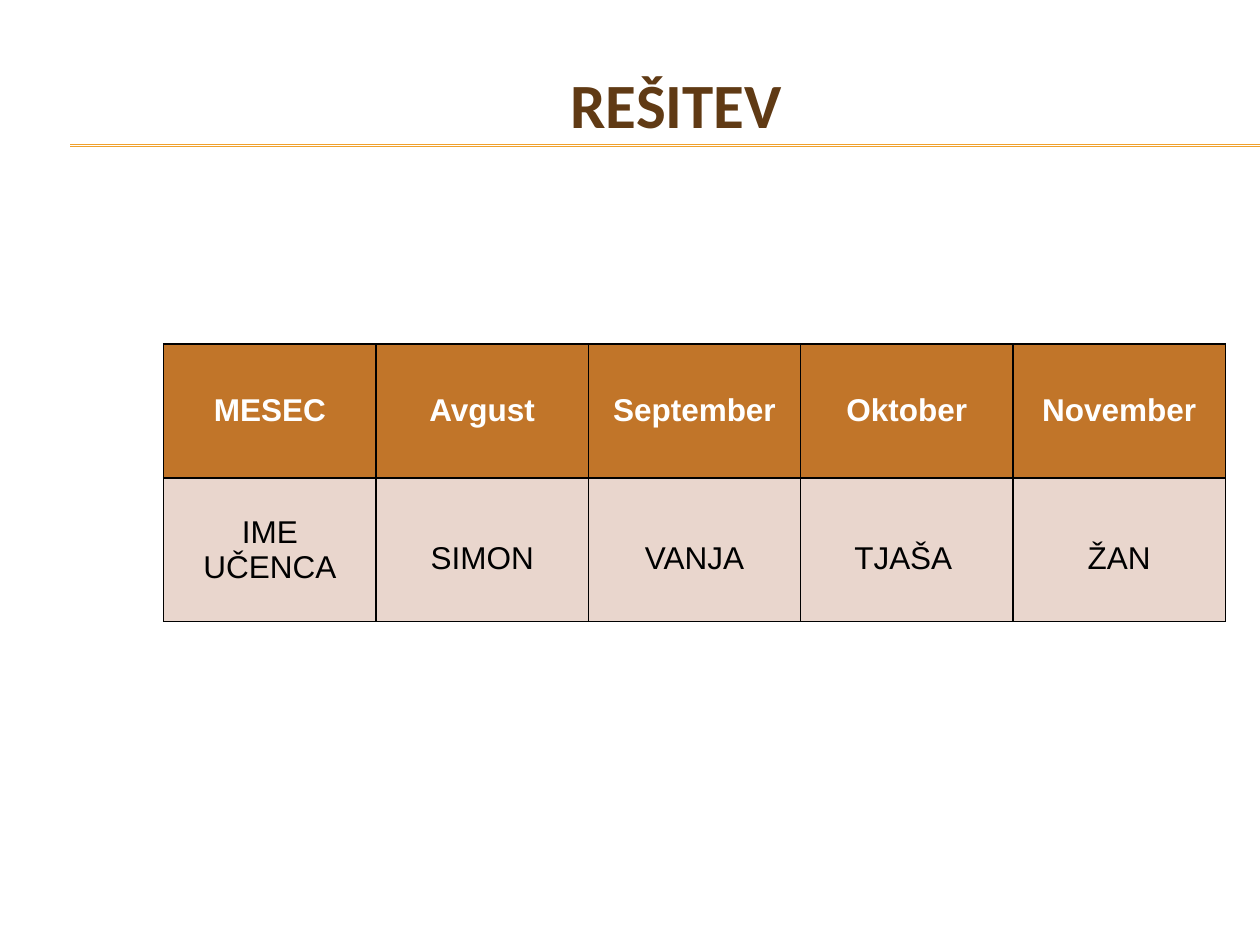
from dataclasses import dataclass

import pptx
import pptx.dml.color
import pptx.enum.shapes
import pptx.enum.text
import pptx.oxml
import pptx.oxml.ns
import pptx.util

Cm = pptx.util.Cm
Pt = pptx.util.Pt
RGBColor = pptx.dml.color.RGBColor
MIDDLE = pptx.enum.text.MSO_ANCHOR.MIDDLE
CENTER = pptx.enum.text.PP_ALIGN.CENTER

BROWN = RGBColor(0x60, 0x3A, 0x14)
GOLD = RGBColor(0xF0, 0xA2, 0x2E)
ORANGE = RGBColor(0xC1, 0x75, 0x29)
BLUSH = RGBColor(0xE9, 0xD6, 0xCD)
WHITE = RGBColor(0xFF, 0xFF, 0xFF)
BLACK = RGBColor(0, 0, 0)


@dataclass
class TextStyle:
    font: str
    size: float
    color: RGBColor
    bold: bool = False


@dataclass
class Row:
    height: float
    fill: RGBColor
    style: TextStyle
    cells: list[list[str]]
    spacing: float = 1.0


TITLE = TextStyle("Calibri", 36, BROWN, True)
HEAD = TextStyle("Arial", 18, WHITE, True)
BODY = TextStyle("Arial", 18, BLACK)

ROWS = [
    Row(2.71, ORANGE, HEAD,
        [["MESEC"], ["Avgust"], ["September"], ["Oktober"], ["November"]]),
    Row(2.89, BLUSH, BODY,
        [["IME", "UČENCA"], ["SIMON"], ["VANJA"], ["TJAŠA "], ["ŽAN"]], 1.5),
]
COL_WIDTH = 4.28
RULES_Y = (2.92, 2.95)


def write(tf, lines: list[str], style: TextStyle, spacing: float = 1.0) -> None:
    for i, line in enumerate(lines):
        p = tf.paragraphs[0] if i == 0 else tf.add_paragraph()
        p.alignment = CENTER
        p.line_spacing = spacing
        r = p.add_run()
        r.text = line
        r.font.name = style.font
        r.font.size = Pt(style.size)
        r.font.bold = style.bold
        r.font.color.rgb = style.color


def add_rule(s, y: float) -> None:
    sp = s.shapes.add_connector(
        pptx.enum.shapes.MSO_CONNECTOR.STRAIGHT, Cm(1.42), Cm(y), Cm(25.4), Cm(y))
    sp.line.color.rgb = GOLD
    sp.line.width = Pt(0.75)
    props = sp._element.spPr
    props.append(props.makeelement(pptx.oxml.ns.qn("a:effectLst"), {}))


def add_title(s, text: str) -> None:
    sp = s.shapes.add_textbox(Cm(0.89), Cm(0.91), Cm(24.13), Cm(2.34))
    tf = sp.text_frame
    tf.word_wrap = True
    tf.vertical_anchor = MIDDLE
    tf.margin_left = Cm(1.6)
    write(tf, [text], TITLE)


def add_borders(cell) -> None:
    """Draw a 1 pt black line on every side of the cell."""
    props = cell._tc.get_or_add_tcPr()
    for i, side in enumerate(("lnL", "lnR", "lnT", "lnB")):
        props.insert(i, pptx.oxml.parse_xml(
            f'<a:{side} {pptx.oxml.ns.nsdecls("a")} w="{Pt(1)}">'
            f'<a:solidFill><a:srgbClr val="{BLACK}"/></a:solidFill></a:{side}>'))


def add_schedule(s, rows: list[Row]) -> None:
    cols = len(rows[0].cells)
    table = s.shapes.add_table(
        len(rows), cols, Cm(3.3), Cm(6.93),
        Cm(COL_WIDTH * cols), Cm(sum(row.height for row in rows))).table
    for col in table.columns:
        col.width = Cm(COL_WIDTH)
    for i, row in enumerate(rows):
        table.rows[i].height = Cm(row.height)
        for j, lines in enumerate(row.cells):
            cell = table.cell(i, j)
            cell.vertical_anchor = MIDDLE
            cell.fill.solid()
            cell.fill.fore_color.rgb = row.fill
            add_borders(cell)
            spacing = row.spacing if len(lines) == 1 else 1.0
            write(cell.text_frame, lines, row.style, spacing)


def main() -> None:
    prs = pptx.Presentation()
    prs.slide_width, prs.slide_height = Cm(25.4), Cm(19.05)
    s = prs.slides.add_slide(prs.slide_layouts[6])
    for y in RULES_Y:
        add_rule(s, y)
    add_title(s, "REŠITEV")
    add_schedule(s, ROWS)
    prs.save("out.pptx")


if __name__ == "__main__":
    main()
